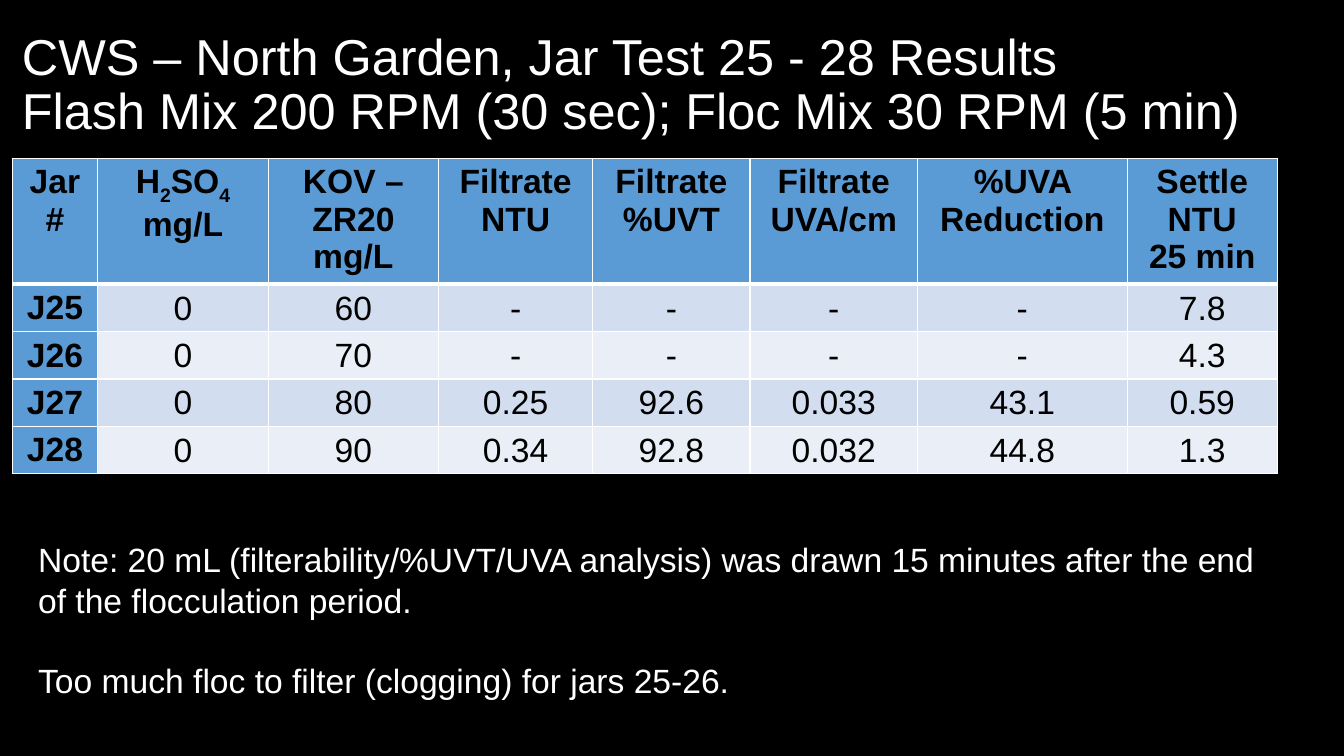
from lxml import etree
from pptx import Presentation
from pptx.dml.color import RGBColor
from pptx.enum.text import MSO_ANCHOR, PP_ALIGN
from pptx.oxml.ns import qn
from pptx.util import Inches, Pt

MIDDLE, CENTER = MSO_ANCHOR.MIDDLE, PP_ALIGN.CENTER
BLACK = RGBColor(0, 0, 0)
WHITE = RGBColor(255, 255, 255)
BLUE = RGBColor(0x5B, 0x9B, 0xD5)
BANDS = RGBColor(0xD2, 0xDE, 0xEF), RGBColor(0xEA, 0xEF, 0xF7)
FONT = "Arial"

TITLE = ("CWS – North Garden, Jar Test 25 - 28 Results\v"
         "Flash Mix 200 RPM (30 sec); Floc Mix 30 RPM (5 min)")
HEADS = ["Jar#", "H2SO4\nmg/L", "KOV – ZR20\nmg/L", "Filtrate\nNTU",
         "Filtrate\n%UVT", "Filtrate\nUVA/cm", "%UVA Reduction",
         "Settle\nNTU\n25 min"]
ROWS = [["J25", "0", "60", "-", "-", "-", "-", "7.8"],
        ["J26", "0", "70", "-", "-", "-", "-", "4.3"],
        ["J27", "0", "80", "0.25", "92.6", "0.033", "43.1", "0.59"],
        ["J28", "0", "90", "0.34", "92.8", "0.032", "44.8", "1.3"]]
WIDTHS = [0.85, 1.69, 1.69, 1.53, 1.56, 1.66, 2.08, 1.49]
HEIGHTS = [1.22] + [0.47] * len(ROWS)
NOTES = ["Note: 20 mL (filterability/%UVT/UVA analysis) was drawn 15 minutes after the end",
         "of the flocculation period.",
         "Too much floc to filter (clogging) for jars 25-26."]


def style(para, size, color, bold=False):
    """Set the font of a paragraph."""
    font = para.font
    font.name, font.size, font.bold = FONT, Pt(size), bold
    font.color.rgb = color


def add_text(slide, box, text, size):
    """Add a white text box with one paragraph per line."""
    frame = slide.shapes.add_textbox(*map(Inches, box)).text_frame
    frame.text = text
    for para in frame.paragraphs:
        style(para, size, WHITE)
    return frame


def add_title(slide, box):
    """Place the two-line title."""
    frame = add_text(slide, box, TITLE, 36)
    frame.word_wrap = True
    frame.vertical_anchor = MIDDLE
    frame.paragraphs[0].line_spacing = 0.9


def add_notes(slide, box):
    """Place the remarks, with a gap before the last one."""
    frame = add_text(slide, box, "\n".join(NOTES), 24)
    frame.word_wrap = False
    frame.paragraphs[-1].space_before = Pt(28.8)


def set_edges(cell, base):
    """Draw the white borders of a cell, with a given base width."""
    props = cell._tc.get_or_add_tcPr()
    edges = zip(("a:lnL", "a:lnR", "a:lnT", "a:lnB"), (1, 1, 1, base))
    for spot, (tag, width) in enumerate(edges):
        line = etree.Element(qn(tag), w=str(Pt(width)))
        fill = etree.SubElement(line, qn("a:solidFill"))
        etree.SubElement(fill, qn("a:srgbClr"), val=str(WHITE))
        props.insert(spot, line)


def set_lines(cell, text, sub):
    """Write centred lines, with digits lowered where sub is true."""
    frame = cell.text_frame
    for spot, line in enumerate(text.split("\n")):
        para = frame.add_paragraph() if spot else frame.paragraphs[0]
        for part in line if sub else [line]:
            run = para.add_run()
            run.text = part
            if sub and part.isdigit():
                run.font._element.set("baseline", "-25000")
        para.alignment = CENTER


def add_grid(slide, left, top):
    """Place the table of jar results."""
    data = [HEADS] + ROWS
    grid = slide.shapes.add_table(
        len(data), len(HEADS), Inches(left), Inches(top),
        Inches(sum(WIDTHS)), Inches(sum(HEIGHTS))).table
    for col, width in zip(grid.columns, WIDTHS):
        col.width = Inches(width)
    for row, height in zip(grid.rows, HEIGHTS):
        row.height = Inches(height)
    for r, texts in enumerate(data):
        for c, text in enumerate(texts):
            cell = grid.cell(r, c)
            head = r == 0 or c == 0
            set_lines(cell, text, text.startswith("H2SO4"))
            for para in cell.text_frame.paragraphs:
                style(para, 24, BLACK, head)
            cell.fill.solid()
            cell.fill.fore_color.rgb = BLUE if head else BANDS[(r - 1) % 2]
            cell.margin_bottom = 0
            if not head:
                cell.vertical_anchor = MIDDLE
                cell.margin_left = cell.margin_right = Inches(0.01)
                cell.margin_top = Inches(0.01)
            set_edges(cell, 1 if r else 3)


def main():
    """Build and save the slide."""
    deck = Presentation()
    deck.slide_width, deck.slide_height = Inches(13.33), Inches(7.5)
    slide = deck.slides.add_slide(deck.slide_layouts[6])
    slide.background.fill.solid()
    slide.background.fill.fore_color.rgb = BLACK
    add_title(slide, (0.12, 0.13, 13.03, 1.45))
    add_grid(slide, 0.12, 1.57)
    add_notes(slide, (0.28, 5.3, 12.48, 1.72))
    deck.save("out.pptx")


if __name__ == "__main__":
    main()
